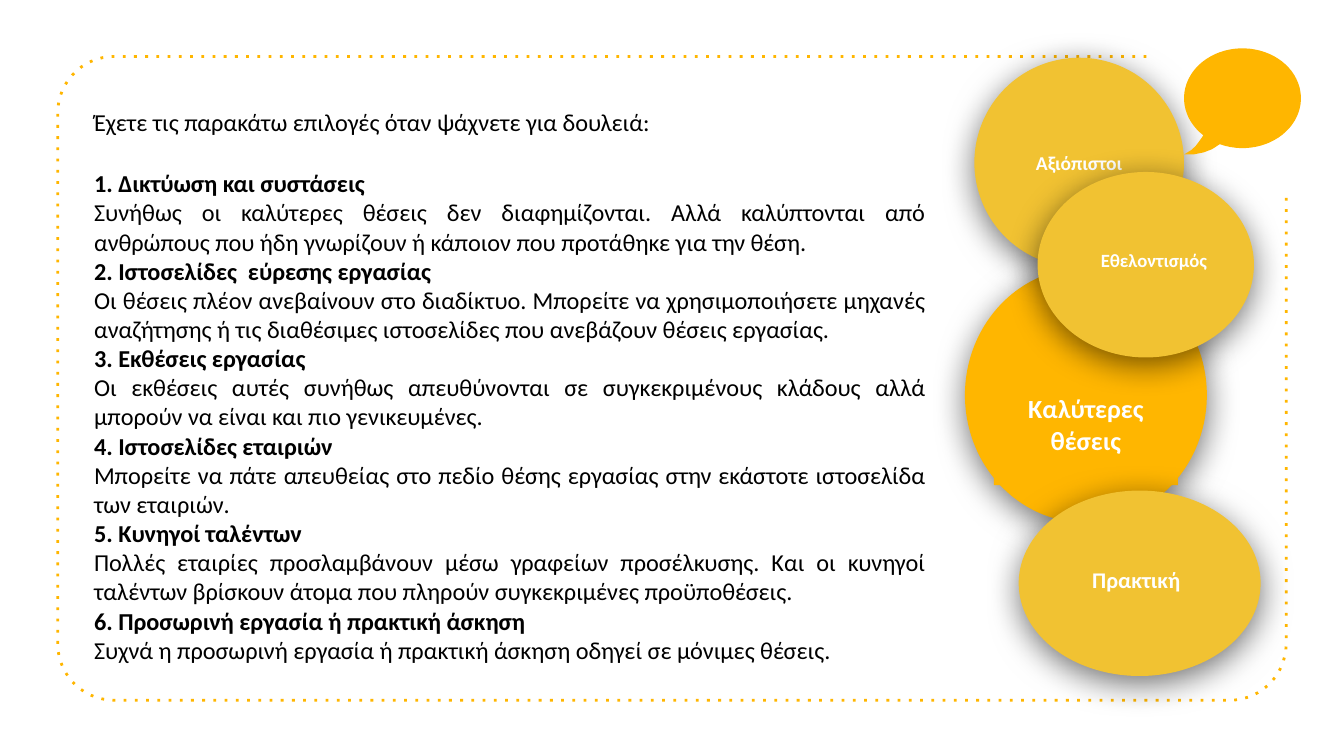
from math import cos, sin, radians

from lxml.etree import SubElement
from pptx import Presentation
from pptx.dml.color import RGBColor
from pptx.enum.dml import MSO_LINE
from pptx.enum.shapes import MSO_SHAPE as SHAPE
from pptx.enum.text import MSO_ANCHOR as ANCHOR, MSO_AUTO_SIZE as AUTO, PP_ALIGN as ALIGN
from pptx.oxml.ns import qn
from pptx.util import Inches, Pt

# Grid of 100 columns; all boxes are (column, row, columns wide, rows high)
CELL = Inches(0.1)
COLS, ROWS = 100, 56.25
FONT = "Calibri"
COLORS = {"amber": "FFB600", "gold": "F1C232", "white": "FFFFFF", "black": "000000"}

INTRO = "Έχετε τις παρακάτω επιλογές όταν ψάχνετε για δουλειά:"
OPTIONS = [
    ("Δικτύωση και συστάσεις",
     "Συνήθως οι καλύτερες θέσεις δεν διαφημίζονται. Αλλά καλύπτονται από "
     "ανθρώπους που ήδη γνωρίζουν ή κάποιον που προτάθηκε για την θέση."),
    ("Ιστοσελίδες  εύρεσης εργασίας",
     "Οι θέσεις πλέον ανεβαίνουν στο διαδίκτυο. Μπορείτε να χρησιμοποιήσετε μηχανές "
     "αναζήτησης ή τις διαθέσιμες ιστοσελίδες που ανεβάζουν θέσεις εργασίας."),
    ("Εκθέσεις εργασίας",
     "Οι εκθέσεις αυτές συνήθως απευθύνονται σε συγκεκριμένους κλάδους αλλά "
     "μπορούν να είναι και πιο γενικευμένες."),
    ("Ιστοσελίδες εταιριών",
     "Μπορείτε να πάτε απευθείας στο πεδίο θέσης εργασίας στην εκάστοτε ιστοσελίδα "
     "των εταιριών."),
    ("Κυνηγοί ταλέντων",
     "Πολλές εταιρίες προσλαμβάνουν μέσω γραφείων προσέλκυσης. Και οι κυνηγοί "
     "ταλέντων βρίσκουν άτομα που πληρούν συγκεκριμένες προϋποθέσεις."),
    ("Προσωρινή εργασία ή πρακτική άσκηση",
     "Συχνά η προσωρινή εργασία ή πρακτική άσκηση οδηγεί σε μόνιμες θέσεις."),
]
# Circle offset in the column, circle size, label offset from centre, label size
CIRCLES = [
    ("Καλύτερες θέσεις", 14, "amber", (0, 15.6), (18, 19), (0, 2.15), (13.7, 9.1)),
    ("Αξιόπιστοι", 10.5, "gold", (0.7, 0), (15.6, 15.6), (0, 0), (10.6, 10.3)),
    ("Πρακτική", 12, "gold", (4, 32.2), (18, 13.8), (-0.25, -0.25), (13.3, 8.7)),
    ("Εθελοντισμός", 10, "gold", (5.4, 8.5), (16.1, 13.8), (0.6, -0.35), (22.7, 7.5)),
]


def rgb(name):
    return RGBColor.from_string(COLORS[name])


def cells(*values):
    return [int(v * CELL) for v in values]


def arc(cx, cy, rx, ry, start, end, step):
    """Points on an ellipse, angles in degrees clockwise from the right."""
    return [(cx + rx * cos(radians(a)), cy + ry * sin(radians(a)))
            for a in range(start, end + (1 if step > 0 else -1), step)]


def add_outline(slide, points, close):
    start, *rest = [cells(*pt) for pt in points]
    builder = slide.shapes.build_freeform(*start)
    builder.add_line_segments(rest, close=close)
    sp = builder.convert_to_shape()
    sp.shadow.inherit = False
    return sp


def add_text(tf, text, size=13, color="black", bold=False, align=ALIGN.CENTER,
             first=True, before=0):
    p = tf.paragraphs[0] if first else tf.add_paragraph()
    pPr = p._p.get_or_add_pPr()
    pPr.set("marL", "0")
    pPr.set("indent", "0")
    p.alignment = align
    p.space_before = Pt(before)
    SubElement(pPr, qn("a:buNone"))
    r = p.add_run()
    r.text = text
    r.font.name, r.font.size, r.font.bold = FONT, Pt(size), bold
    r.font.color.rgb = rgb(color)


def set_frame(tf, anchor):
    tf.word_wrap, tf.auto_size, tf.vertical_anchor = True, AUTO.NONE, anchor
    tf.margin_left = tf.margin_right = tf.margin_top = tf.margin_bottom = CELL


def add_solid(slide, kind, box, color):
    sp = slide.shapes.add_shape(kind, *cells(*box))
    sp.shadow.inherit = False
    sp.fill.solid()
    sp.fill.fore_color.rgb = rgb(color)
    sp.line.fill.background()
    return sp


def add_soft_shadow(sp):
    effects = sp._element.spPr.find(qn("a:effectLst"))
    shadow = SubElement(effects, qn("a:outerShdw"), blurRad=str(Pt(18)), dist=str(Pt(4)),
                        dir="5400000", algn="bl", rotWithShape="0")
    tint = SubElement(shadow, qn("a:srgbClr"), val=COLORS["black"])
    SubElement(tint, qn("a:alpha"), val="55000")


def draw_border(slide, box):
    """Dotted round-cornered border, open at the top right."""
    x, y, w, h = box
    rad = 4.2
    left, right, top, bottom = x + rad, x + w - rad, y + rad, y + h - rad
    points = [(x + w - 10.4, y)]
    points += arc(left, top, rad, rad, 270, 180, -6)
    points += arc(left, bottom, rad, rad, 180, 90, -6)
    points += arc(right, bottom, rad, rad, 90, 0, -6)
    points.append((x + w, y + 10.4))
    sp = add_outline(slide, points, close=False)
    sp.fill.background()
    sp.line.color.rgb = rgb("amber")
    sp.line.width = Pt(1.5)
    sp.line.dash_style = MSO_LINE.ROUND_DOT
    sp.line._ln.find(qn("a:prstDash")).set("val", "dot")


def draw_circles(slide, box):
    """Overlapping labelled circles, back to front."""
    x, y = box[:2]
    for text, size, color, (dx, dy), (w, h), (lx, ly), (lw, lh) in CIRCLES:
        circle = add_solid(slide, SHAPE.OVAL, (x + dx, y + dy, w, h), color)
        add_soft_shadow(circle)
        label_box = (x + dx + w / 2 + lx - lw / 2, y + dy + h / 2 + ly - lh / 2, lw, lh)
        if color == "amber":
            label = add_solid(slide, SHAPE.RECTANGLE, label_box, color)
        else:
            label = slide.shapes.add_textbox(*cells(*label_box))
        set_frame(label.text_frame, ANCHOR.MIDDLE)
        add_text(label.text_frame, text, size=size, color="white", bold=True)


def draw_bubble(slide, box):
    """Speech bubble with its tail at the lower left."""
    x, y, w, h = box
    rx, ry = w / 2, h * 0.47
    points = arc(x + rx, y + ry, rx, ry, 132, 472, 5)
    tail = [(0.31, 0.9), (0.24, 0.95), (0.17, 0.98), (0.08, 1), (0, 1),
            (0.06, 0.96), (0.1, 0.92), (0.14, 0.86)]
    points += [(x + w * u, y + h * v) for u, v in tail]
    sp = add_outline(slide, points, close=True)
    sp.fill.solid()
    sp.fill.fore_color.rgb = rgb("amber")
    sp.line.fill.background()


def fill_body(slide, box):
    """Introduction and numbered options in the body placeholder."""
    body = slide.placeholders[1]
    body.left, body.top, body.width, body.height = cells(*box)
    tf = body.text_frame
    set_frame(tf, ANCHOR.TOP)
    add_text(tf, INTRO, align=ALIGN.JUSTIFY)
    for n, (heading, detail) in enumerate(OPTIONS, 1):
        add_text(tf, f"{n}. {heading}", bold=True, align=ALIGN.JUSTIFY, first=False,
                 before=17 if n == 1 else 0)
        add_text(tf, detail, align=ALIGN.JUSTIFY, first=False)


def main():
    prs = Presentation()
    prs.slide_width, prs.slide_height = cells(COLS, ROWS)
    slide = prs.slides.add_slide(prs.slide_layouts[1])
    title = slide.shapes.title._element
    title.getparent().remove(title)
    draw_border(slide, (4.3, 4.2, 91.4, 47.9))
    draw_circles(slide, (71.8, 4.3, 22, 46))
    draw_bubble(slide, (88.1, 3.6, 8.7, 7.9))
    fill_body(slide, (6, 7, 63.8, 46.8))
    prs.save("out.pptx")


if __name__ == "__main__":
    main()
